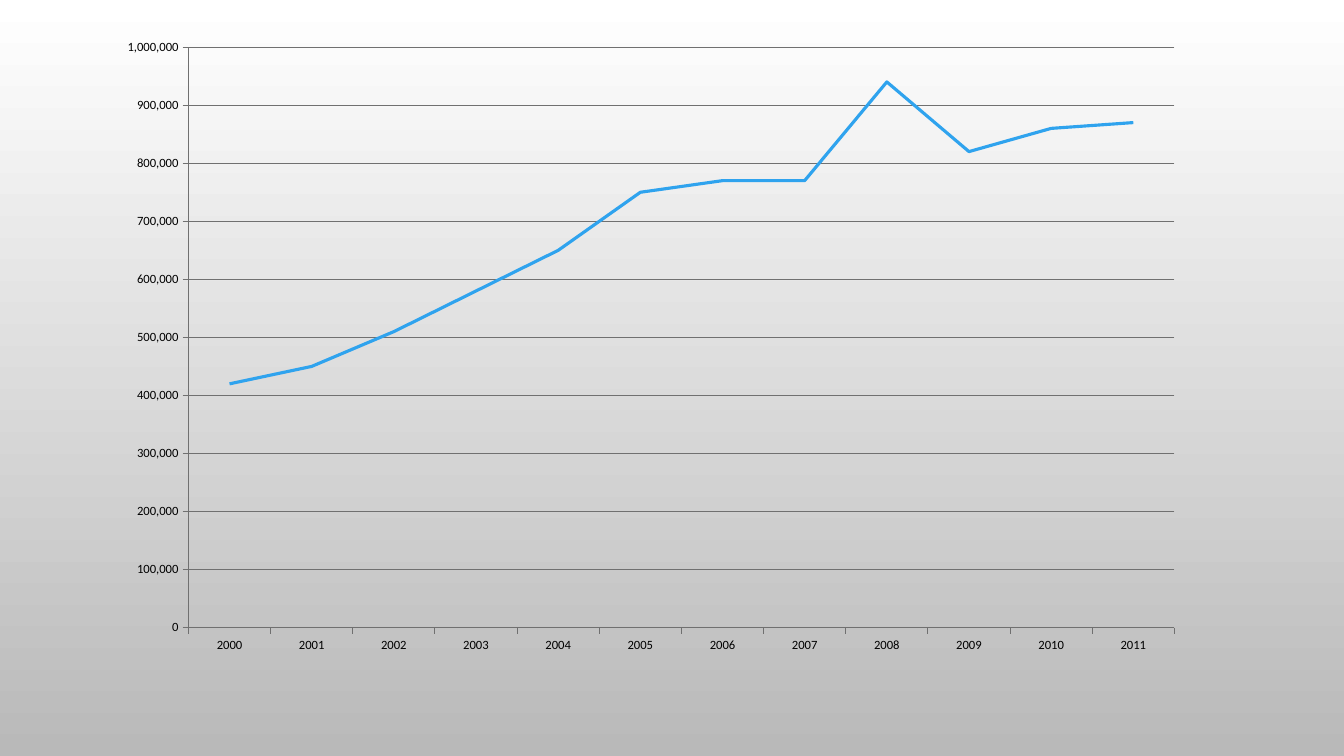
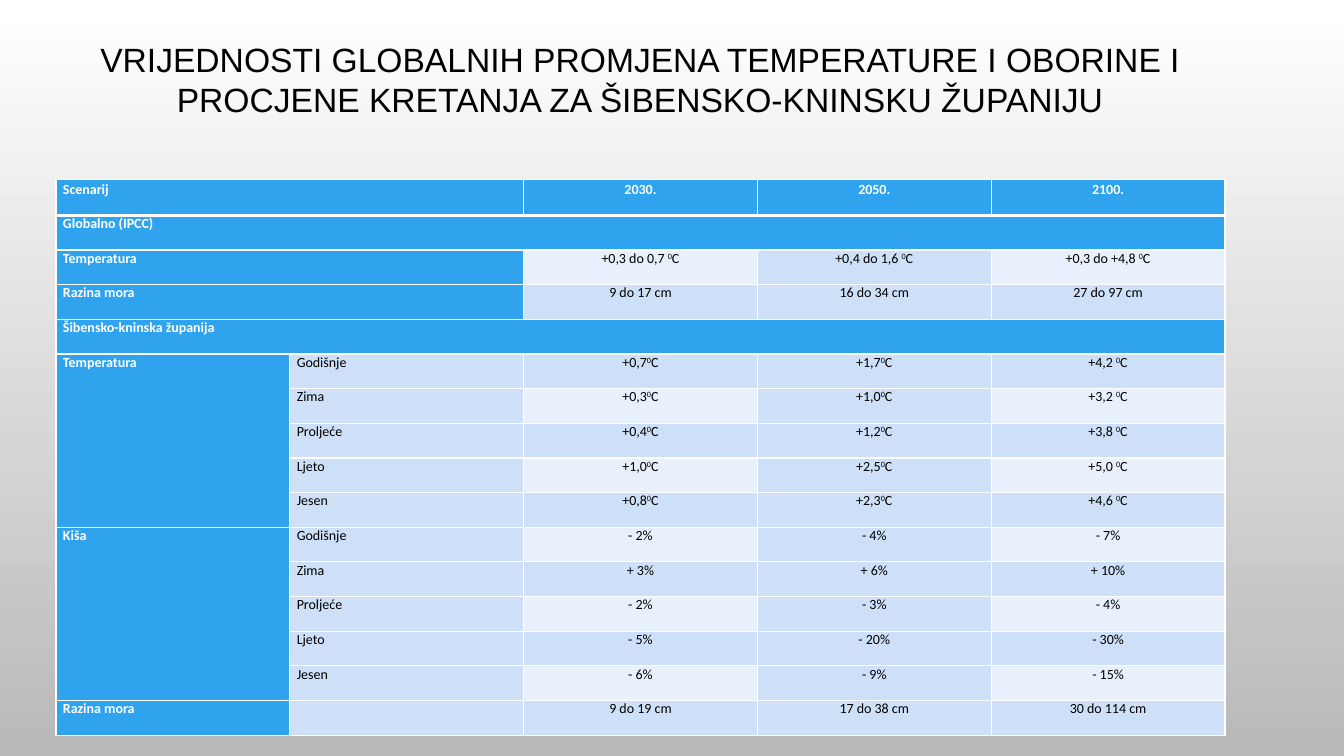
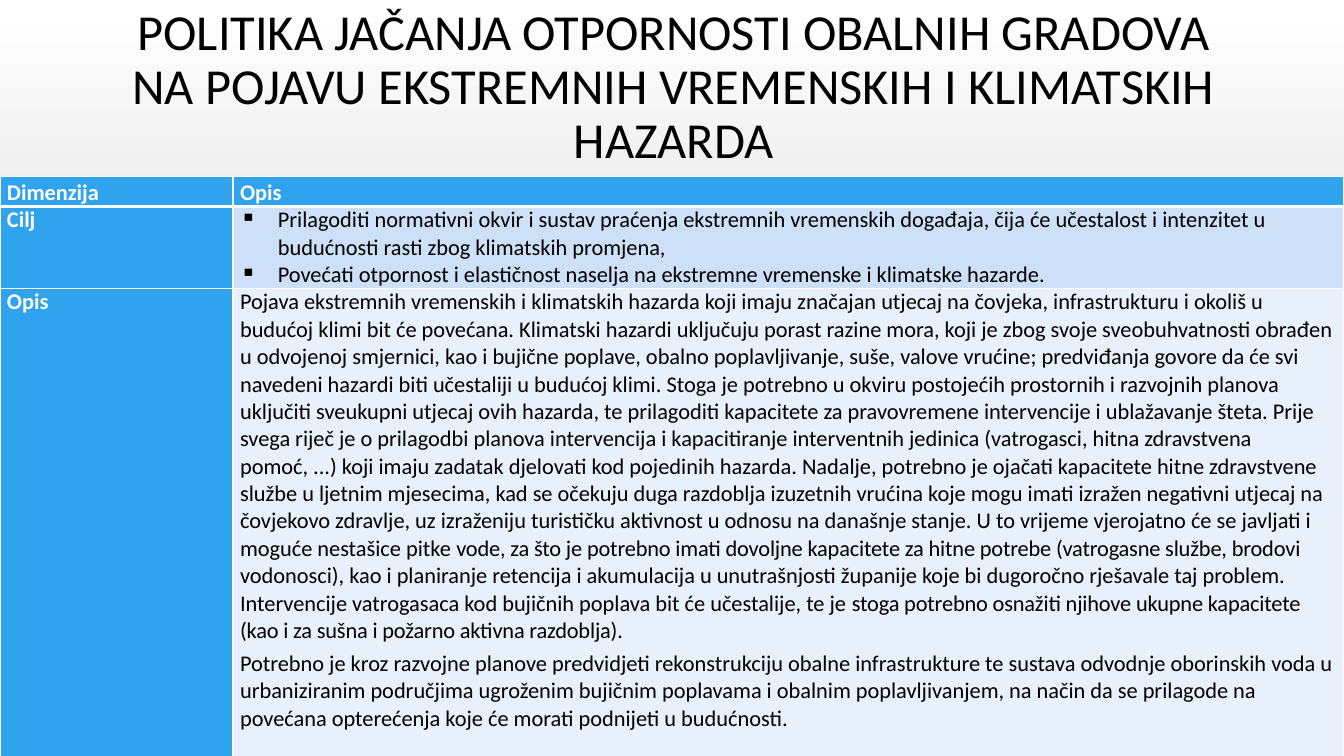
from pptx import Presentation
from pptx.chart.data import CategoryChartData
from pptx.dml.color import RGBColor
from pptx.enum.chart import XL_CHART_TYPE as ChartType, XL_TICK_MARK as TickMark
from pptx.enum.text import MSO_ANCHOR as Anchor, PP_ALIGN as Align
from pptx.oxml import parse_xml
from pptx.oxml.ns import nsdecls
from pptx.util import Pt

BLUE, PALE, LIGHT = "2FA3EE", "CDE0F8", "E8F0FC"
WHITE, BLACK, GRAY, BOTTOM_GRAY = "FFFFFF", "000000", "707070", "B9B9B9"
BODY_FONT = "Calibri"

YEARLY_VALUES = {
    "2000": 420000, "2001": 450000, "2002": 510000, "2003": 580000,
    "2004": 650000, "2005": 750000, "2006": 770000, "2007": 770000,
    "2008": 940000, "2009": 820000, "2010": 860000, "2011": 870000,
}

SCENARIO_ROWS = [
    ["Scenarij", "", "2030.", "2050.", "2100."],
    ["Globalno (IPCC)", "", "", "", ""],
    ["Temperatura", "", "+0,3 do 0,7 ⁰C", "+0,4 do 1,6 ⁰C", "+0,3 do +4,8 ⁰C"],
    ["Razina mora", "", "9 do 17 cm", "16 do 34 cm", "27 do 97 cm"],
    ["Šibensko-kninska županija", "", "", "", ""],
    ["Temperatura", "Godišnje", "+0,7⁰C", "+1,7⁰C", "+4,2 ⁰C"],
    ["", "Zima", "+0,3⁰C", "+1,0⁰C", "+3,2 ⁰C"],
    ["", "Proljeće", "+0,4⁰C", "+1,2⁰C", "+3,8 ⁰C"],
    ["", "Ljeto", "+1,0⁰C", "+2,5⁰C", "+5,0 ⁰C"],
    ["", "Jesen", "+0,8⁰C", "+2,3⁰C", "+4,6 ⁰C"],
    ["Kiša", "Godišnje", "- 2%", "- 4%", "- 7%"],
    ["", "Zima", "+ 3%", "+ 6%", "+ 10%"],
    ["", "Proljeće", "- 2%", "- 3%", "- 4%"],
    ["", "Ljeto", "- 5%", "- 20%", "- 30%"],
    ["", "Jesen", "- 6%", "- 9%", "- 15%"],
    ["Razina mora", "", "9 do 19 cm", "17 do 38 cm", "30 do 114 cm"],
]
SCENARIO_MERGES = [
    ((0, 0), (0, 1)), ((1, 0), (1, 4)), ((2, 0), (2, 1)), ((3, 0), (3, 1)),
    ((4, 0), (4, 4)), ((5, 0), (9, 0)), ((10, 0), (14, 0)),
]

GOALS = [
    "Prilagoditi normativni okvir i sustav praćenja ekstremnih vremenskih događaja, "
    "čija će učestalost i intenzitet u budućnosti rasti zbog klimatskih promjena,",
    "Povećati otpornost i elastičnost naselja na ekstremne vremenske i klimatske hazarde.",
]
TIGHT = {"spc": "-10"}
DESCRIPTION = [
    [
        ("Pojava ekstremnih vremenskih i klimatskih hazarda koji imaju značajan utjecaj na "
         "čovjeka, infrastrukturu i okoliš u budućoj klimi bit će povećana. Klimatski hazardi "
         "uključuju porast razine mora, koji je zbog svoje sveobuhvatnosti obrađen u odvojenoj "
         "smjernici, kao i bujične poplave, obalno poplavljivanje, suše, valove vrućine; "
         "predviđanja govore da će svi navedeni hazardi biti učestaliji u budućoj klimi. ", {}),
        ("Stoga je potrebno u okviru postojećih prostornih i razvojnih planova uključiti "
         "sveukupni utjecaj ovih hazarda, te prilagoditi kapacitete za pravovremene intervencije "
         "i ublažavanje šteta. Prije svega riječ je o prilagodbi planova intervencija i "
         "kapacitiranje interventnih jedinica (vatrogasci, hitna zdravstvena pomoć, ...) koji "
         "imaju zadatak djelovati kod pojedinih hazarda. ", {}),
        ("Nadalje, potrebno je ojačati kapacitete "
         "hitne zdravstvene službe u ljetnim mjesecima, kad se očekuju duga razdoblja izuzetnih "
         "vrućina koje mogu imati izražen negativni utjecaj na čovjekovo zdravlje, uz izraženiju "
         "turističku aktivnost u odnosu na današnje stanje. U to vrijeme vjerojatno će se "
         "javljati i moguće nestašice pitke ", {}),
        ("vode, za što je potrebno imati dovoljne kapacitete za hitne potrebe (vatrogasne "
         "službe, brodovi ", TIGHT),
        ("vodonosci), kao i planiranje retencija i akumulacija u unutrašnjosti županije koje bi "
         "dugoročno rješavale taj problem. Intervencije vatrogasaca kod bujičnih poplava bit će "
         "učestalije, te je ", {}),
        ("stoga potrebno osnažiti njihove ukupne kapacitete (kao i za sušna i požarno aktivna "
         "razdoblja).", TIGHT),
    ],
    [
        ("Potrebno je kroz razvojne planove predvidjeti rekonstrukciju obalne infrastrukture te "
         "sustava odvodnje oborinskih voda u urbaniziranim područjima ugroženim bujičnim "
         "poplavama i obalnim poplavljivanjem, na način da se prilagode na povećana opterećenja "
         "koje će morati podnijeti u budućnosti.", {}),
    ],
]


def rgb(value):
    return RGBColor.from_string(value)


def set_values(target, values):
    for name, value in values.items():
        setattr(target, name, value)


def set_font(font, size, color=BLACK, bold=False, name=BODY_FONT):
    set_values(font, {"name": name, "size": Pt(size), "bold": bold})
    font.color.rgb = rgb(color)


def set_line(line, color, width):
    line.color.rgb = rgb(color)
    line.width = Pt(width)


def set_background(presentation):
    fill = presentation.slide_master.background.fill
    fill.gradient()
    fill.gradient_angle = 270
    for stop, color in zip(fill.gradient_stops, (WHITE, BOTTOM_GRAY)):
        stop.color.rgb = rgb(color)


def add_slide(presentation):
    return presentation.slides.add_slide(presentation.slide_layouts[6])


def add_title(slide, text, box, size, font_name=BODY_FONT, line_spacing=1.0, bottom_inset=3.6):
    shape = slide.shapes.add_textbox(*map(Pt, box))
    set_values(shape.text_frame, {
        "word_wrap": True,
        "vertical_anchor": Anchor.MIDDLE,
        "margin_bottom": Pt(bottom_inset),
    })
    paragraph = shape.text_frame.paragraphs[0]
    set_values(paragraph, {"alignment": Align.CENTER, "line_spacing": line_spacing})
    run = paragraph.add_run()
    run.text = text
    set_font(run.font, size, name=font_name)


def add_line_chart(slide, values, box):
    data = CategoryChartData(number_format="#,##0")
    data.categories = list(values)
    data.add_series("Series 1", list(values.values()))
    chart = slide.shapes.add_chart(ChartType.LINE, *map(Pt, box), data).chart
    set_values(chart, {"has_legend": False, "has_title": False})
    set_font(chart.font, 10)
    plot = chart.plots[0]
    plot.vary_by_categories = False
    series = plot.series[0]
    series.smooth = False
    set_line(series.format.line, BLUE, 2.25)
    for axis in (chart.category_axis, chart.value_axis):
        axis.major_tick_mark = TickMark.OUTSIDE
        set_font(axis.tick_labels.font, 9)
        set_line(axis.format.line, GRAY, 0.75)
    set_values(chart.value_axis, {
        "minimum_scale": 0, "maximum_scale": 1000000, "major_unit": 100000,
        "has_major_gridlines": True,
    })
    set_line(chart.value_axis.major_gridlines.format.line, GRAY, 0.75)
    set_values(chart.value_axis.tick_labels, {
        "number_format": "#,##0", "number_format_is_linked": False,
    })
    place_plot_area(chart, {"x": 0.08, "y": 0.03, "w": 0.9, "h": 0.91})


def place_plot_area(chart, fractions):
    plot_area = chart._chartSpace.chart.plotArea
    for layout in plot_area.findall("{*}layout"):
        plot_area.remove(layout)
    sizes = "".join(f'<c:{name} val="{value}"/>' for name, value in fractions.items())
    plot_area.insert(0, parse_xml(
        f'<c:layout {nsdecls("c")}><c:manualLayout><c:layoutTarget val="inner"/>'
        f'<c:xMode val="edge"/><c:yMode val="edge"/>{sizes}</c:manualLayout></c:layout>'))


def add_borders(cell, row_index):
    properties = cell._tc.get_or_add_tcPr()
    for side in ("lnL", "lnR", "lnT", "lnB"):
        width = 3 if (row_index, side) in ((0, "lnB"), (1, "lnT")) else 1
        properties.append(parse_xml(
            f'<a:{side} {nsdecls("a")} w="{Pt(width)}"><a:solidFill>'
            f'<a:srgbClr val="{WHITE}"/></a:solidFill></a:{side}>'))


def add_bullet(paragraph):
    properties = paragraph._p.get_or_add_pPr()
    properties.set("marL", str(Pt(27)))
    properties.set("indent", str(Pt(-27)))
    properties.append(parse_xml(f'<a:buChar {nsdecls("a")} char="▪"/>'))
    properties.append(parse_xml(
        f'<a:tabLst {nsdecls("a")}><a:tab pos="{Pt(36)}" algn="l"/></a:tabLst>'))


def add_table(slide, left, top, widths, heights):
    table = slide.shapes.add_table(
        len(heights), len(widths), Pt(left), Pt(top), Pt(sum(widths)), Pt(sum(heights))).table
    set_values(table, {"first_row": False, "horz_banding": False})
    for column, width in zip(table.columns, widths):
        column.width = Pt(width)
    for row, height in zip(table.rows, heights):
        row.height = Pt(height)
    return table


def fill_cell(table, row, column, paragraphs, size, color, alignment=Align.LEFT, bulleted=False):
    cell = table.cell(row, column)
    set_values(cell, {
        "margin_left": Pt(5), "margin_right": Pt(5), "margin_top": 0, "margin_bottom": 0,
    })
    add_borders(cell, row)
    cell.fill.solid()
    cell.fill.fore_color.rgb = rgb(color)
    heading = color == BLUE
    for index, runs in enumerate(paragraphs):
        frame = cell.text_frame
        paragraph = frame.add_paragraph() if index else frame.paragraphs[0]
        paragraph.alignment = alignment
        if row == 0:
            paragraph.line_spacing = 1.1
        if bulleted:
            add_bullet(paragraph)
        elif index:
            paragraph.space_before = Pt(4)
        for text, attributes in runs:
            run = paragraph.add_run()
            run.text = text
            set_font(run.font, size, WHITE if heading else BLACK, heading)
            for name, value in attributes.items():
                run._r.get_or_add_rPr().set(name, value)


def degree_runs(text):
    number, mark, unit = text.partition("⁰")
    pieces = [(number, {}), ("0" if mark else "", {"baseline": "30000"}), (unit, {})]
    return [piece for piece in pieces if piece[0]]


def scenario_color(row, column):
    if column == 0 or row in (0, 1, 4):
        return BLUE
    return LIGHT if row % 2 == 0 and column in (2, 4) else PALE


def add_scenario_table(slide):
    heights = [25.9] + [24.75] * (len(SCENARIO_ROWS) - 1)
    table = add_table(slide, 40, 128, [167] * 5, heights)
    for row, texts in enumerate(SCENARIO_ROWS):
        for column, text in enumerate(texts):
            fill_cell(table, row, column, [degree_runs(text)], 10, scenario_color(row, column),
                      Align.CENTER if column > 1 else Align.LEFT)
    for first, last in SCENARIO_MERGES:
        table.cell(*first).merge(table.cell(*last))


def add_policy_table(slide):
    table = add_table(slide, 0, 126, [166.5, 793.5], [21.5, 58.6, 349])
    for row, label in enumerate(("Dimenzija", "Cilj", "Opis")):
        fill_cell(table, row, 0, [[(label, {})]], 16, BLUE)
    fill_cell(table, 0, 1, [[("Opis", {})]], 16, BLUE)
    fill_cell(table, 1, 1, [[(goal, {})] for goal in GOALS], 16, PALE, bulleted=True)
    fill_cell(table, 2, 1, DESCRIPTION, 16, LIGHT)


def main():
    presentation = Presentation()
    set_values(presentation, {"slide_width": Pt(960), "slide_height": Pt(540)})
    set_background(presentation)

    add_line_chart(add_slide(presentation), YEARLY_VALUES, (72, 20, 782.6, 455.8))

    scenario_slide = add_slide(presentation)
    add_scenario_table(scenario_slide)
    add_title(scenario_slide,
              "VRIJEDNOSTI GLOBALNIH PROMJENA TEMPERATURE I OBORINE I PROCJENE KRETANJA "
              "ZA ŠIBENSKO-KNINSKU ŽUPANIJU",
              (48, 23, 818.6, 94.3), 24, font_name="Arial", bottom_inset=31)

    policy_slide = add_slide(presentation)
    add_title(policy_slide,
              "POLITIKA JAČANJA OTPORNOSTI OBALNIH GRADOVA NA POJAVU EKSTREMNIH "
              "VREMENSKIH I KLIMATSKIH HAZARDA",
              (73.4, 0, 815.8, 126), 36, line_spacing=0.9)
    add_policy_table(policy_slide)

    presentation.save("out.pptx")


if __name__ == "__main__":
    main()
